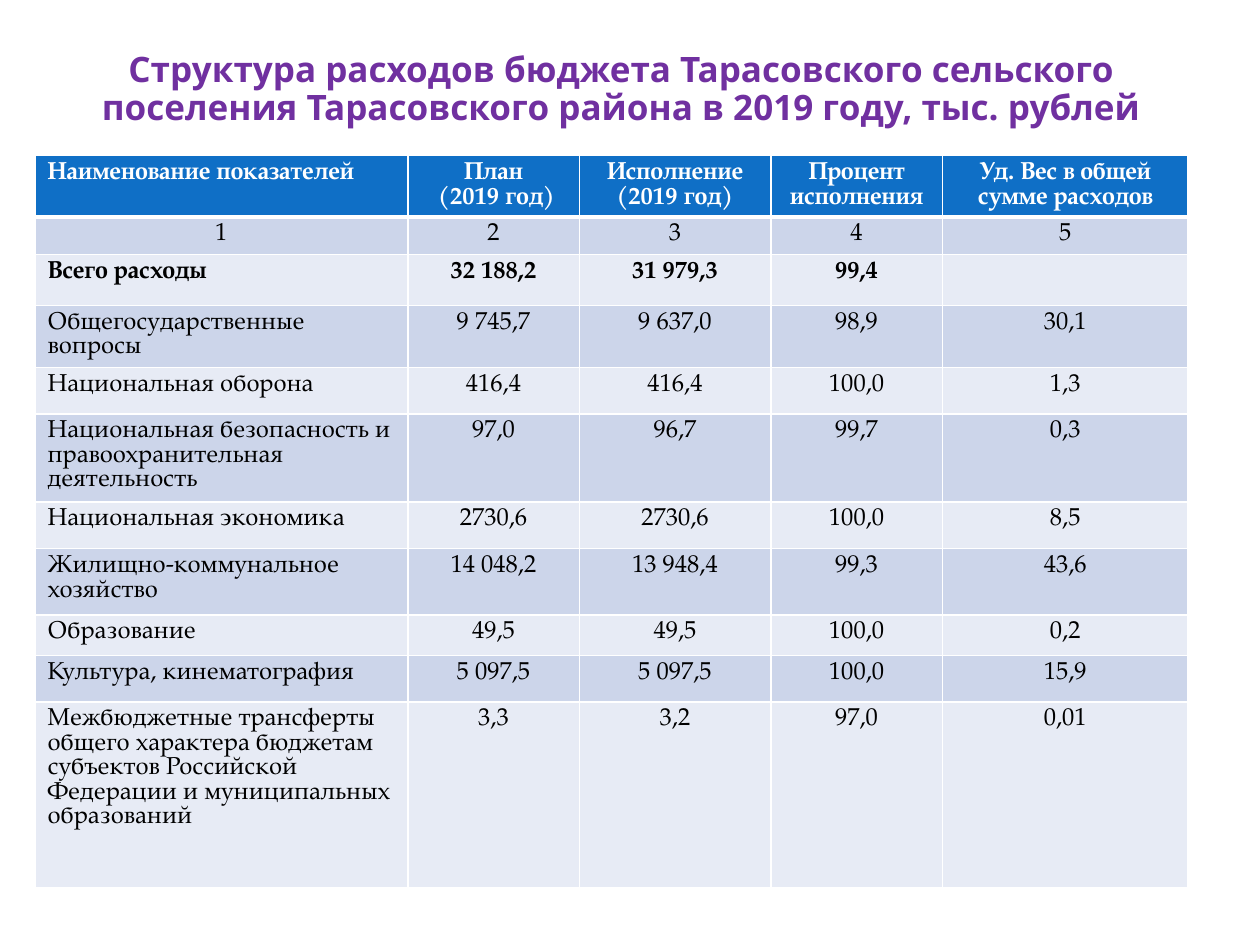
from dataclasses import dataclass

from lxml.etree import SubElement
from pptx import Presentation
from pptx.dml.color import RGBColor
from pptx.enum.text import MSO_ANCHOR, PP_ALIGN
from pptx.oxml.ns import qn
from pptx.util import Pt

PURPLE = RGBColor(0x70, 0x30, 0xA0)
BLUE = RGBColor(0x0F, 0x6F, 0xC6)
DARK_BAND = RGBColor(0xCC, 0xD5, 0xEA)
LIGHT_BAND = RGBColor(0xE7, 0xEB, 0xF5)
WHITE = RGBColor(0xFF, 0xFF, 0xFF)
BLACK = RGBColor(0, 0, 0)

TITLE = ("Структура расходов бюджета Тарасовского сельского поселения "
         "Тарасовского района в 2019 году, тыс. рублей")
TITLE_FONT = {"name": "Noto Sans", "size": Pt(20), "bold": True}
TABLE_FONT = {"name": "TeX Gyre Pagella", "size": Pt(14)}
COLUMN_WIDTHS = (213, 98, 109.5, 98, 140.5)


@dataclass
class BudgetRow:
    height: float
    texts: tuple[str, ...]
    bold: bool = False
    name_align: PP_ALIGN = PP_ALIGN.LEFT


ROWS = [
    BudgetRow(35.4, ("Наименование показателей", "План\n (2019 год)",
                     "Исполнение (2019 год)", "Процент исполнения",
                     "Уд. Вес в общей сумме расходов"), bold=True),
    BudgetRow(21.4, ("1", "2", "3", "4", "5"), name_align=PP_ALIGN.CENTER),
    BudgetRow(21.4, ("Всего расходы", "32 188,2", "31 979,3", "99,4", ""), bold=True),
    BudgetRow(35.4, ("Общегосударственные вопросы", "9 745,7", "9 637,0", "98,9", "30,1")),
    BudgetRow(26.7, ("Национальная оборона", "416,4", "416,4", "100,0", "1,3")),
    BudgetRow(50.3, ("Национальная безопасность и правоохранительная деятельность",
                     "97,0", "96,7", "99,7", "0,3")),
    BudgetRow(26.7, ("Национальная экономика", "2730,6", "2730,6", "100,0", "8,5")),
    BudgetRow(37.8, ("Жилищно-коммунальное хозяйство",
                     "14 048,2", "13 948,4", "99,3", "43,6")),
    BudgetRow(23.3, ("Образование", "49,5", "49,5", "100,0", "0,2")),
    BudgetRow(26.5, ("Культура, кинематография", "5 097,5", "5 097,5", "100,0", "15,9")),
    BudgetRow(106.4, ("Межбюджетные трансферты общего характера бюджетам субъектов "
                      "Российской Федерации и муниципальных образований",
                      "3,3", "3,2", "97,0", "0,01")),
]


def apply_format(target, values: dict) -> None:
    for attribute, value in values.items():
        setattr(target, attribute, value)


def add_borders(cell, widths: dict[str, float]) -> None:
    """Give a cell white borders; they must precede its fill in the XML."""
    properties = cell._tc.get_or_add_tcPr()
    for side, width in widths.items():
        line = SubElement(properties, qn(f"a:{side}"), w=str(Pt(width)))
        fill = SubElement(line, qn("a:solidFill"))
        SubElement(fill, qn("a:srgbClr"), val=str(WHITE))


def fill_cell(cell, text: str, align: PP_ALIGN, bold: bool,
              color: RGBColor, background: RGBColor, borders: dict[str, float]) -> None:
    add_borders(cell, borders)
    cell.fill.solid()
    cell.fill.fore_color.rgb = background
    cell.text = text
    for paragraph in cell.text_frame.paragraphs:
        apply_format(paragraph, {"alignment": align, "line_spacing": Pt(14)})
        for run in paragraph.runs:
            apply_format(run.font, {**TABLE_FONT, "bold": bold})
            run.font.color.rgb = color


def add_title(slide) -> None:
    title = slide.shapes.title
    apply_format(title, {"left": Pt(31), "top": Pt(15), "width": Pt(648), "height": Pt(73.5)})
    apply_format(title.text_frame, {"text": TITLE, "word_wrap": True,
                                    "vertical_anchor": MSO_ANCHOR.MIDDLE})
    heading = title.text_frame.paragraphs[0]
    apply_format(heading, {"alignment": PP_ALIGN.CENTER, "line_spacing": 0.9})
    apply_format(heading.runs[0].font, TITLE_FONT)
    heading.runs[0].font.color.rgb = PURPLE


def add_budget_table(slide) -> None:
    budget = slide.shapes.add_table(
        len(ROWS), len(COLUMN_WIDTHS), Pt(20), Pt(88.6),
        Pt(sum(COLUMN_WIDTHS)), Pt(sum(row.height for row in ROWS))).table
    for column, width in zip(budget.columns, COLUMN_WIDTHS):
        column.width = Pt(width)
    for row_index, row in enumerate(ROWS):
        budget.rows[row_index].height = Pt(row.height)
        is_header = row_index == 0
        band = DARK_BAND if row_index % 2 else LIGHT_BAND
        # A thick rule separates the header from the figures
        borders = {"lnL": 1, "lnR": 1, "lnT": 3 if row_index == 1 else 1,
                   "lnB": 3 if is_header else 1}
        for column_index, text in enumerate(row.texts):
            fill_cell(budget.cell(row_index, column_index), text,
                      PP_ALIGN.CENTER if column_index else row.name_align, row.bold,
                      WHITE if is_header else BLACK, BLUE if is_header else band, borders)


def main() -> None:
    presentation = Presentation()
    apply_format(presentation, {"slide_width": Pt(720), "slide_height": Pt(540)})
    slide = presentation.slides.add_slide(presentation.slide_layouts[5])
    add_title(slide)
    add_budget_table(slide)
    presentation.save("out.pptx")


if __name__ == "__main__":
    main()
